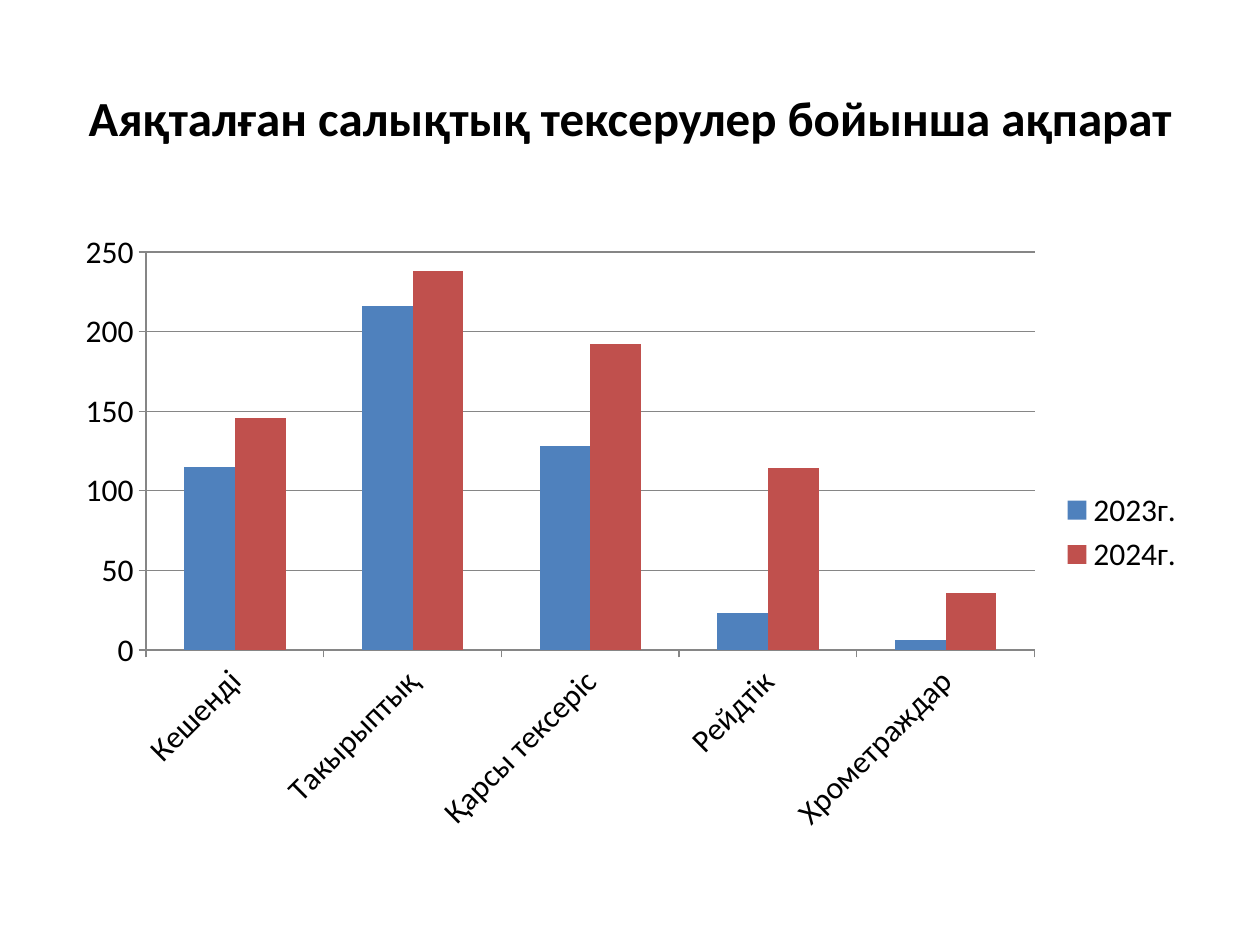
from pptx import Presentation
from pptx.chart.data import CategoryChartData
from pptx.dml.color import RGBColor
from pptx.enum.chart import XL_CHART_TYPE, XL_LEGEND_POSITION, XL_TICK_MARK
from pptx.enum.text import MSO_ANCHOR, PP_ALIGN
from pptx.util import Pt

BLACK = RGBColor(0x00, 0x00, 0x00)
GRAY = RGBColor(0x86, 0x86, 0x86)
BLUE = RGBColor(0x4F, 0x81, 0xBD)
RED = RGBColor(0xC0, 0x50, 0x4D)

AUDIT_TYPES = ["Кешенді", "Такырыптық", "Қарсы тексеріс", "Рейдтік", "Хрометраждар"]
AUDITS_BY_YEAR = [
    ("2023г.", [115, 216, 128, 23, 6], BLUE),
    ("2024г.", [146, 238, 192, 114, 36], RED),
]


class SlideBuilder:
    font_name = "Calibri"
    left, width = 36, 648

    def __init__(self, slide):
        self.slide = slide

    def style_font(self, font, size, bold=False):
        font.name = self.font_name
        font.size = Pt(size)
        font.bold = bold
        font.color.rgb = BLACK

    def frame(self, top, height):
        return Pt(self.left), Pt(top), Pt(self.width), Pt(height)

    def title(self, text, top, height):
        heading = self.slide.shapes.title
        heading.left, heading.top, heading.width, heading.height = self.frame(top, height)
        heading.text_frame.text = text
        heading.text_frame.word_wrap = True
        heading.text_frame.vertical_anchor = MSO_ANCHOR.MIDDLE
        paragraph = heading.text_frame.paragraphs[0]
        paragraph.alignment = PP_ALIGN.CENTER
        self.style_font(paragraph.font, 28, bold=True)

    def column_chart(self, categories, series_rows, top, height):
        data = CategoryChartData()
        data.categories = categories
        for name, values, _ in series_rows:
            data.add_series(name, values)
        chart = self.slide.shapes.add_chart(
            XL_CHART_TYPE.COLUMN_CLUSTERED, *self.frame(top, height), data
        ).chart
        chart.has_title = False
        self.style_font(chart.font, 18)

        # Columns
        plot = chart.plots[0]
        plot.gap_width = 150
        plot.overlap = 0
        plot.vary_by_categories = False
        for series, (_, _, color) in zip(plot.series, series_rows):
            series.format.fill.solid()
            series.format.fill.fore_color.rgb = color

        # Axes and gridlines
        category_axis, value_axis = chart.category_axis, chart.value_axis
        for axis in (category_axis, value_axis):
            axis.major_tick_mark = XL_TICK_MARK.OUTSIDE
            axis.minor_tick_mark = XL_TICK_MARK.NONE
            axis.format.line.color.rgb = GRAY
            self.style_font(axis.tick_labels.font, 18)
        category_axis._element.txPr.bodyPr.set("rot", "-2700000")  # 45 degrees upward
        value_axis.minimum_scale = 0
        value_axis.maximum_scale = 250
        value_axis.major_unit = 50
        value_axis.has_major_gridlines = True
        value_axis.major_gridlines.format.line.color.rgb = GRAY

        # Legend
        chart.has_legend = True
        chart.legend.position = XL_LEGEND_POSITION.RIGHT
        chart.legend.include_in_layout = False
        self.style_font(chart.legend.font, 18)


def main():
    presentation = Presentation()
    presentation.slide_width = Pt(720)
    presentation.slide_height = Pt(540)
    title_only = presentation.slide_layouts[5]
    builder = SlideBuilder(presentation.slides.add_slide(title_only))

    builder.title("Аяқталған салықтық тексерулер бойынша ақпарат", top=21.6, height=90)
    builder.column_chart(AUDIT_TYPES, AUDITS_BY_YEAR, top=126, height=356.4)

    presentation.save("out.pptx")


if __name__ == "__main__":
    main()
